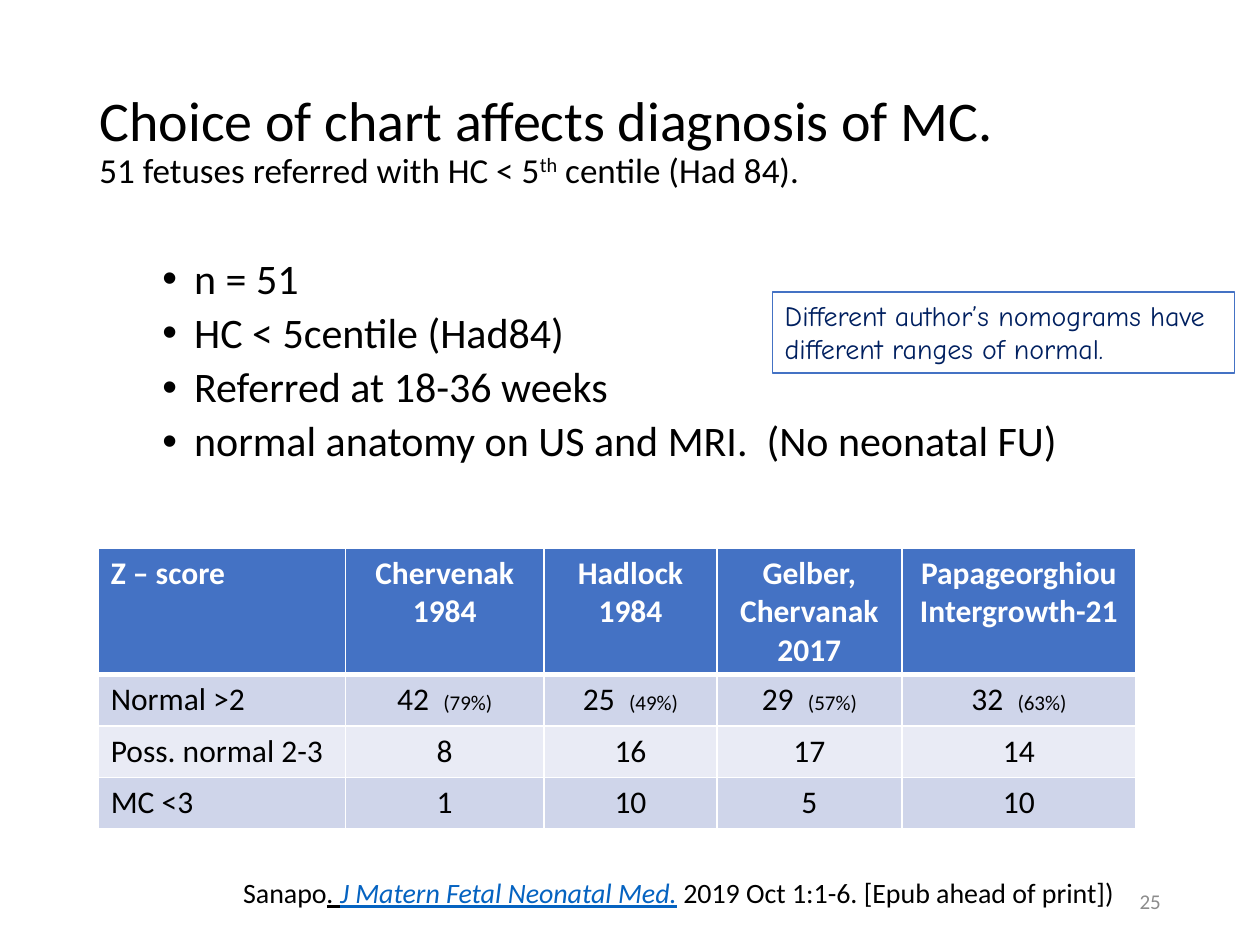
from lxml import etree
from pptx import Presentation, util as u
from pptx.dml.color import RGBColor
from pptx.enum import shapes, text
from pptx.oxml.ns import qn

LEFT, CENTER, RIGHT = text.PP_ALIGN.LEFT, text.PP_ALIGN.CENTER, text.PP_ALIGN.RIGHT


def color(hex_string):
    return RGBColor.from_string(hex_string)


class Deck:
    font = "Calibri"
    black, white, blue, navy = "000000", "FFFFFF", "4472C4", "002060"
    link, grey = "0563C1", "8C8C8C"
    bands = ("CFD5EA", "E9EBF5")

    def __init__(self, width, height):
        self.prs = Presentation()
        self.prs.slide_width, self.prs.slide_height = u.Cm(width), u.Cm(height)
        self.slide = self.prs.slides.add_slide(self.prs.slide_layouts[1])

    def place(self, shape, box):
        shape.left, shape.top, shape.width, shape.height = map(u.Cm, box)

    def style(self, run, size, hue=black, font=font, bold=False, italic=False,
              underline=False, raised=False):
        f = run.font
        f.size, f.name, f.bold, f.italic, f.underline = u.Pt(size), font, bold, italic, underline
        f.color.rgb = color(hue)
        if raised:
            f._element.set("baseline", "30000")

    def add_runs(self, paragraph, pieces, align=LEFT):
        """Each piece is (text, size) or (text, size, style options)."""
        paragraph.alignment = align
        for words, size, *options in pieces:
            run = paragraph.add_run()
            run.text = words
            self.style(run, size, **(options[0] if options else {}))

    def title(self, box, heading, subtitle):
        holder = self.slide.shapes.title
        self.place(holder, box)
        frame = holder.text_frame
        frame.auto_size = text.MSO_AUTO_SIZE.NONE
        frame.vertical_anchor = text.MSO_ANCHOR.MIDDLE
        line = frame.paragraphs[0]
        line.line_spacing = 0.9
        self.add_runs(line, [heading])
        line.add_line_break()
        # The break takes the heading's size so the first line keeps its height
        etree.SubElement(line._p[-1], qn("a:rPr"), sz=str(heading[1] * 100))
        self.add_runs(line, subtitle)

    def bullets(self, box, items, size):
        holder = self.slide.placeholders[1]
        self.place(holder, box)
        frame = holder.text_frame
        frame.text = "\n".join(items)
        frame.auto_size = text.MSO_AUTO_SIZE.NONE
        for item in frame.paragraphs:
            item.level, item.line_spacing, item.space_before = 1, 0.9, u.Pt(5)
            props = item._p.get_or_add_pPr()
            props.set("marL", str(u.Cm(1.91)))
            props.set("indent", str(u.Cm(-0.64)))
            etree.SubElement(props, qn("a:buFont"), typeface="Arial")
            etree.SubElement(props, qn("a:buChar"), char="•")
            self.style(item.runs[0], size)

    def label(self, box, pieces, align, wrap=True, anchor=text.MSO_ANCHOR.TOP):
        frame = self.slide.shapes.add_textbox(*map(u.Cm, box)).text_frame
        frame.word_wrap, frame.vertical_anchor = wrap, anchor
        self.add_runs(frame.paragraphs[0], pieces, align)

    def note(self, box, words, size, font):
        rect = self.slide.shapes.add_shape(shapes.MSO_SHAPE.RECTANGLE, *map(u.Cm, box))
        rect.shadow.inherit = False
        rect.fill.solid()
        rect.fill.fore_color.rgb = color(self.white)
        rect.line.color.rgb, rect.line.width = color(self.blue), u.Pt(0.75)
        frame = rect.text_frame
        frame.word_wrap, frame.vertical_anchor = True, text.MSO_ANCHOR.TOP
        self.add_runs(frame.paragraphs[0], [(words, size, dict(hue=self.navy, font=font))])

    def borders(self, cell, bottom):
        props = cell._tc.get_or_add_tcPr()
        for side, points in (("L", 1), ("R", 1), ("T", 1), ("B", bottom)):
            edge = etree.SubElement(props, qn(f"a:ln{side}"), w=str(u.Pt(points)))
            paint = etree.SubElement(edge, qn("a:solidFill"))
            etree.SubElement(paint, qn("a:srgbClr"), val=self.white)

    def table(self, left, top, widths, heights, rows, size, share_size):
        frame = self.slide.shapes.add_table(
            len(rows), len(widths), *map(u.Cm, (left, top, sum(widths), sum(heights))))
        grid = frame.table
        for column, width in zip(grid.columns, widths):
            column.width = u.Cm(width)
        for r, (row, height) in enumerate(zip(rows, heights)):
            grid.rows[r].height = u.Cm(height)
            header = r == 0
            for c, words in enumerate(row):
                cell = grid.cell(r, c)
                # The top edge of the first body row matches the header's thick rule
                self.borders(cell, 3 if header else 1)
                cell.fill.solid()
                cell.fill.fore_color.rgb = color(self.blue if header else self.bands[(r - 1) % 2])
                cell.text_frame.text = words
                for line in cell.text_frame.paragraphs:
                    line.alignment = CENTER if c else LEFT
                    self.style(line.runs[0], size, self.white if header else self.black,
                               bold=header)
                if r == 1 and c:
                    self.add_runs(line, [(SHARES[c - 1], share_size)], CENTER)


SHARES = ["(79%)", "(49%)", "(57%)", "(63%)"]
Z_SCORES = [
    ["Z – score", "Chervenak 1984", "Hadlock\n1984", "Gelber,\nChervanak\n2017",
     "Papageorghiou\nIntergrowth-21"],
    ["Normal >2", "42  ", "25  ", "29  ", "32  "],
    ["Poss. normal 2-3", "8", "16", "17", "14"],
    ["MC <3", "1", "10", "5", "10"],
]


def main():
    deck = Deck(25.4, 19.05)

    # Title and cohort
    deck.title((1.75, 1.02, 23.14, 3.68),
               ("Choice of chart affects diagnosis of MC. ", 32),
               [("51 fetuses referred with HC < 5", 20), ("th", 20, dict(raised=True)),
                (" centile (Had 84).", 20)])
    deck.bullets((1.75, 5.08, 23.14, 12.09),
                 ["n = 51", "HC < 5centile (Had84)", "Referred at 18-36 weeks",
                  "normal anatomy on US and MRI.  (No neonatal FU)"], 24)

    # Citation
    cited = dict(italic=True, underline=True)
    deck.label((4.45, 17.53, 18.26, 0.94),
               [("Sanapo", 16), (". ", 16, cited),
                ("J Matern Fetal Neonatal Med.", 16, dict(cited, hue=deck.link)),
                (" 2019 Oct 1:1-6. [Epub ahead of print])", 16)], RIGHT, wrap=False)

    # Diagnosis by chart
    deck.table(1.98, 11.05, [4.98, 4.01, 3.48, 3.73, 4.72], [2.51] + [1.04] * 3,
               Z_SCORES, 18, 12)

    # Slide number and remark
    deck.label((17.93, 17.65, 5.72, 1.02), [("25", 12, dict(hue=deck.grey))], RIGHT,
               anchor=text.MSO_ANCHOR.MIDDLE)
    deck.note((15.57, 5.89, 9.32, 1.63),
              "Different author’s nomograms have different ranges of normal.", 16, "Comic Neue")

    deck.prs.save("out.pptx")


if __name__ == "__main__":
    main()
